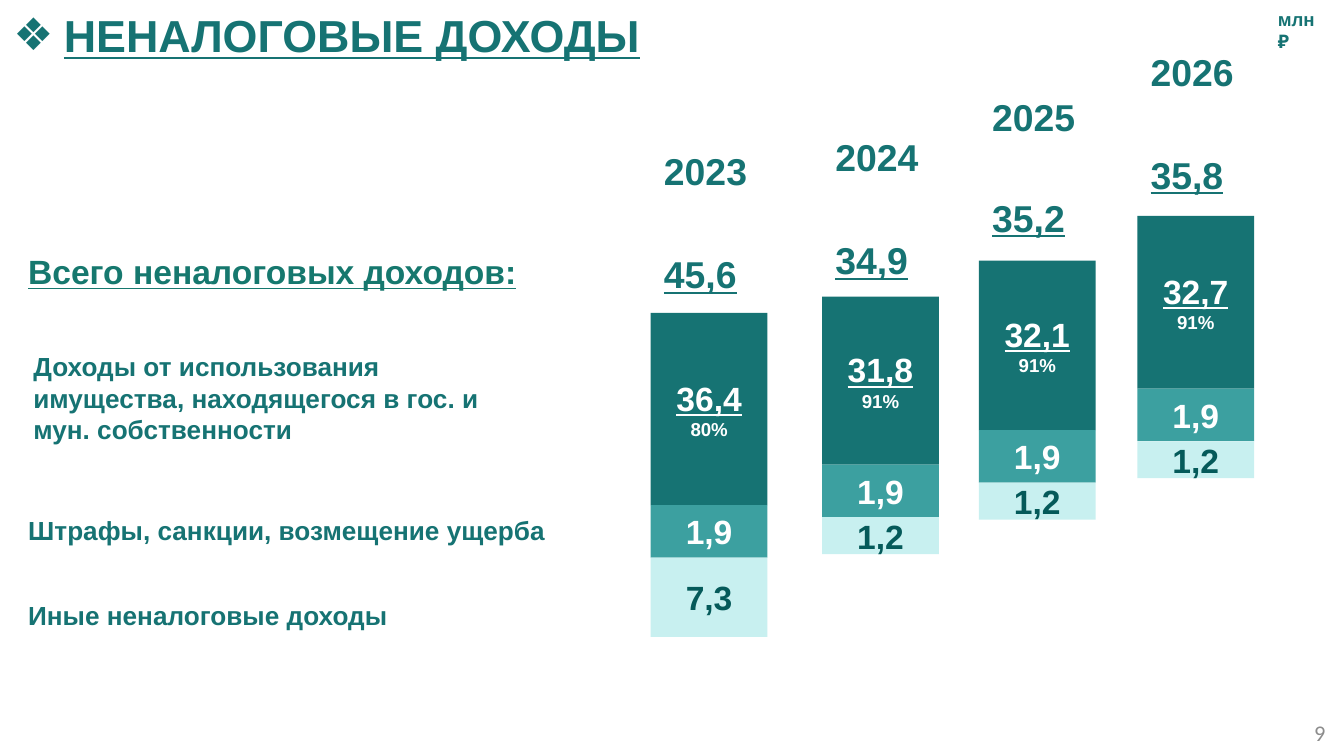
from dataclasses import dataclass
from lxml import etree
from pptx import Presentation
from pptx.dml.color import RGBColor
from pptx.enum.shapes import MSO_SHAPE
from pptx.enum.text import MSO_ANCHOR, MSO_AUTO_SIZE, PP_ALIGN
from pptx.oxml.ns import qn
from pptx.util import Pt

RECTANGLE = MSO_SHAPE.RECTANGLE
TOP, MIDDLE = MSO_ANCHOR.TOP, MSO_ANCHOR.MIDDLE
LEFT, CENTER, RIGHT = PP_ALIGN.LEFT, PP_ALIGN.CENTER, PP_ALIGN.RIGHT


@dataclass(frozen=True)
class Theme:
    font: str = "Arial"
    number_font: str = "Calibri"
    dark: RGBColor = RGBColor(0x16, 0x73, 0x73)
    medium: RGBColor = RGBColor(0x3C, 0xA0, 0xA0)
    light: RGBColor = RGBColor(0xC8, 0xF0, 0xF0)
    deep: RGBColor = RGBColor(0x05, 0x5A, 0x5A)
    green: RGBColor = RGBColor(0x16, 0x78, 0x6E)
    white: RGBColor = RGBColor(0xFF, 0xFF, 0xFF)
    gray: RGBColor = RGBColor(0x8C, 0x8C, 0x8C)
    title: int = 24
    year: int = 20
    value: int = 18
    label: int = 14
    number: int = 12
    small: int = 10


theme = Theme()


def write(paragraph, text, size, color, underline=False, align=LEFT, font=theme.font, bold=True):
    paragraph.text = text
    paragraph.alignment = align
    paragraph.font.name = font
    paragraph.font.size = Pt(size)
    paragraph.font.bold = bold
    paragraph.font.underline = underline
    paragraph.font.color.rgb = color


def add_text(left, top, width, height, text, size, color=theme.dark, wrap=True, **style):
    frame = slide.shapes.add_textbox(Pt(left), Pt(top), Pt(width), Pt(height)).text_frame
    frame.word_wrap = wrap
    write(frame.paragraphs[0], text, size, color, **style)
    return frame


presentation = Presentation()
presentation.slide_width, presentation.slide_height = Pt(720), Pt(405)
slide = presentation.slides.add_slide(presentation.slide_layouts[5])

heading = slide.shapes.title
heading.left, heading.top, heading.width, heading.height = Pt(0), Pt(0.7), Pt(353.5), Pt(36)
heading.text_frame.word_wrap = False
heading.text_frame.auto_size = MSO_AUTO_SIZE.NONE
heading.text_frame.vertical_anchor = TOP
heading_line = heading.text_frame.paragraphs[0]
heading_format = heading_line._p.get_or_add_pPr()
heading_format.set("marL", str(Pt(27)))
heading_format.set("indent", str(-Pt(27)))
etree.SubElement(heading_format, qn("a:buFont")).set("typeface", theme.font)
etree.SubElement(heading_format, qn("a:buChar")).set("char", "❖")
write(heading_line, "НЕНАЛОГОВЫЕ ДОХОДЫ", theme.title, theme.dark, underline=True)

add_text(677.5, 0.7, 42.5, 19.4, "млн ₽", theme.small, wrap=False)
add_text(8, 131, 278.6, 29, "Всего неналоговых доходов:", theme.value, theme.green,
         wrap=False, underline=True)

categories = [
    (10.8, 184.3, 275.8, 58.3,
     "Доходы от использования имущества, находящегося в гос. и мун. собственности"),
    (8, 272.2, 294.5, 24.5, "Штрафы, санкции, возмещение ущерба"),
    (8, 317.5, 208, 24.5, "Иные неналоговые доходы"),
]
for left, top, width, height, category in categories:
    add_text(left, top, width, height, category, theme.label)

bar_width = 62.6
property_scale = 2.83
fines_height = 28.2
years = [
    ("2023", 348.6, 75.6, 131, 167.6, "45,6", "36,4", "80%", "1,9", "7,3", 42.4),
    ("2024", 440.4, 68.4, 123.8, 158.9, "34,9", "31,8", "91%", "1,9", "1,2", 19.8),
    ("2025", 524.4, 46.8, 100.8, 139.6, "35,2", "32,1", "91%", "1,9", "1,2", 19.8),
    ("2026", 609.3, 23, 77.8, 115.7, "35,8", "32,7", "91%", "1,9", "1,2", 19.8),
]
for (year, left, year_top, total_top, bar_top, total,
     property_income, share, fines, other, other_height) in years:
    add_text(left, year_top, 63.4, 31.7, year, theme.year)
    add_text(left, total_top, 63.4, 31.7, total, theme.year, underline=True)
    property_height = round(float(property_income.replace(",", ".")) * property_scale, 1)
    segments = [
        (property_income, share, property_height, theme.dark, theme.white),
        (fines, None, fines_height, theme.medium, theme.white),
        (other, None, other_height, theme.light, theme.deep),
    ]
    top = bar_top
    for amount, percent, height, fill, ink in segments:
        segment = slide.shapes.add_shape(RECTANGLE, Pt(left), Pt(top), Pt(bar_width), Pt(height))
        segment.shadow.inherit = False
        segment.fill.solid()
        segment.fill.fore_color.rgb = fill
        segment.line.fill.background()
        frame = segment.text_frame
        frame.word_wrap = True
        frame.vertical_anchor = MIDDLE
        write(frame.paragraphs[0], amount, theme.value, ink,
              underline=percent is not None, align=CENTER)
        if percent:
            write(frame.add_paragraph(), percent, theme.small, ink, align=CENTER)
        top += height

page_number = add_text(549.4, 381.6, 167.8, 21.6, "9", theme.number, theme.gray,
                       align=RIGHT, font=theme.number_font, bold=False)
page_number.vertical_anchor = MIDDLE

presentation.save("out.pptx")
